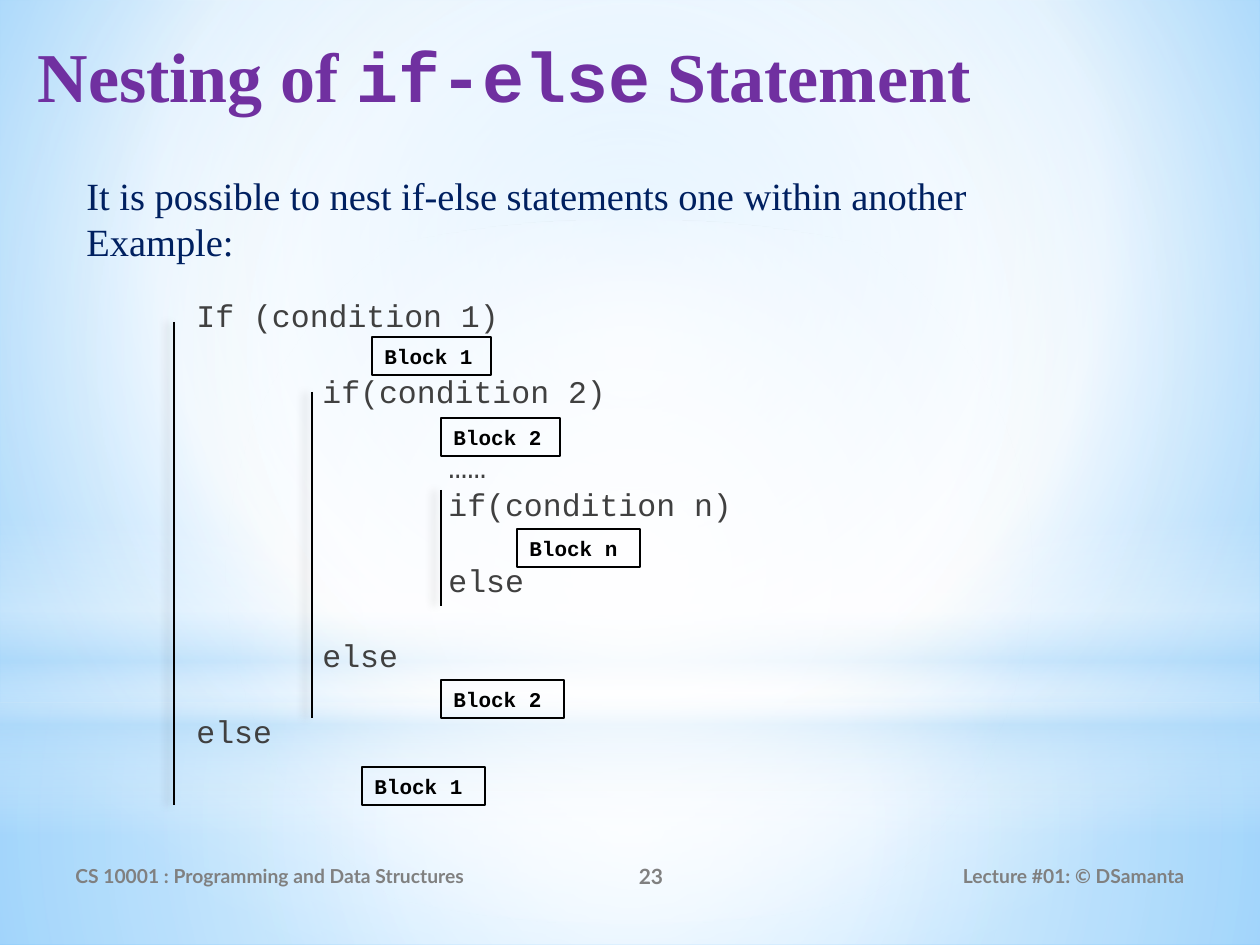
from lxml import etree
from pptx import Presentation
from pptx import util as u
from pptx.dml.color import RGBColor
from pptx.enum import shapes, text
from pptx.oxml import parse_xml
from pptx.oxml.ns import nsdecls, qn

HUE = {"title": "7030A0", "body": "002060", "code": "404040",
       "foot": "808080", "line": "000000"}
SERIF, MONO, SANS = "Times New Roman", "Courier New", "Lato"
LEFT, MID, RIGHT = text.PP_ALIGN.LEFT, text.PP_ALIGN.CENTER, text.PP_ALIGN.RIGHT


def px(*nums):
    return [u.Emu(round(n * 914400 / 126)) for n in nums]


def write(para, words, font, size, hue, bold=False):
    run = para.add_run()
    run.text = words
    run.font.name = font
    run.font.size = u.Pt(size)
    run.font.bold = bold
    run.font.color.rgb = RGBColor.from_string(HUE[hue])


deck = Presentation()
deck.slide_width, deck.slide_height = px(1260, 945)
slide = deck.slides.add_slide(deck.slide_layouts[5])

RECT, OVAL = shapes.MSO_SHAPE.RECTANGLE, shapes.MSO_SHAPE.OVAL
CORE = (50, 50, 50, 50)
layers = [
    (None, None, (20, 10, 20, 60),
     [(0, "9ED5FF", 100), (60, "FFFFFF", 100), (100, "5BB9FF", 100)]),
    (RECT, (0, 703, 1260, 242), CORE,
     [(0, "FFFFFF", 91), (37, "FFFFFF", 76), (100, "B4DCFA", 79)]),
    (RECT, (0, 0, 1260, 703), CORE,
     [(0, "FFFFFF", 89), (48, "FFFFFF", 62), (100, "B4DCFA", 79)]),
    (RECT, (0, 519, 1260, 315), None,
     [(0, "FFFFFF", 0), (29, "FFFFFF", 30), (45, "B4DCFA", 40),
      (55, "FFFFFF", 26), (65, "B4DCFA", 60), (100, "FFFFFF", 0)]),
    (OVAL, (0, 220, 1260, 703), CORE,
     [(0, "FFFFFF", 100), (56, "FFFFFF", 0)]),
]
for kind, box, focus, stops in layers:
    if kind is None:
        slide.background.fill.solid()
        root = slide.element
    else:
        layer = slide.shapes.add_shape(kind, *px(*box))
        layer.shadow.inherit = False
        layer.fill.solid()
        layer.line.fill.background()
        root = layer.element
    old = root.find(".//" + qn("a:solidFill"))
    grad = parse_xml(f'<a:gradFill {nsdecls("a")} rotWithShape="1"/>')
    row = etree.SubElement(grad, qn("a:gsLst"))
    for spot, hue, alpha in stops:
        stop = etree.SubElement(row, qn("a:gs"), pos=str(spot * 1000))
        tint = etree.SubElement(stop, qn("a:srgbClr"), val=hue)
        etree.SubElement(tint, qn("a:alpha"), val=str(alpha * 1000))
    if focus:
        ring = etree.SubElement(grad, qn("a:path"), path="circle")
        rect = etree.SubElement(ring, qn("a:fillToRect"))
        for side, part in zip("ltrb", focus):
            rect.set(side, str(part * 1000))
    else:
        etree.SubElement(grad, qn("a:lin"), ang="5400000", scaled="0")
    old.getparent().replace(old, grad)

title = slide.shapes.title
title.element.getparent().append(title.element)
title.left, title.top, title.width, title.height = px(25, 26, 1201, 139)
frame = title.text_frame
frame.word_wrap = True
frame.vertical_anchor = text.MSO_ANCHOR.TOP
frame.margin_top = px(7)[0]
para = frame.paragraphs[0]
para.alignment = LEFT
for words, font in [("Nesting of ", SERIF), ("if-else", MONO), (" Statement", SERIF)]:
    write(para, words, font, 40, "title", True)

for words, size, side, left, wide in [
        ("CS 10001 : Programming and Data Structures", 11, LEFT, 63, 462),
        ("23", 12, MID, 525, 252),
        ("Lecture #01: © DSamanta", 11, RIGHT, 850, 347)]:
    frame = slide.shapes.add_textbox(*px(left, 851, wide, 50)).text_frame
    frame.word_wrap = True
    frame.vertical_anchor = text.MSO_ANCHOR.MIDDLE
    frame.paragraphs[0].alignment = side
    write(frame.paragraphs[0], words, SANS, size, "foot", True)

intro = [(0, 0, "It is possible to nest if-else statements one within another"),
         (0, 0, "Example:")]
code = [(0, 0, "If (condition 1)"), (1, 1, "if(condition 2)"),
        (2, 1, "……"), (2, 0, "if(condition n)"), (2, 1, "else"),
        (1, 1, "else"), (0, 1, "else")]
for box, rows, font, size, hue, pitch in [
        ((74, 166, 1052, 106), intro, SERIF, 22, "body", 26.3),
        ((184, 290, 873, 509), code, MONO, 18, "code", 21.6)]:
    frame = slide.shapes.add_textbox(*px(*box)).text_frame
    frame.word_wrap = True
    for n, (depth, gap, words) in enumerate(rows):
        para = frame.add_paragraph() if n else frame.paragraphs[0]
        para.line_spacing = u.Pt(pitch)
        para.space_before = u.Pt(pitch * gap)
        para._p.get_or_add_pPr().set("marL", str(px(126 * depth)[0]))
        write(para, words, font, size, hue)

for words, left, top, wide in [
        ("Block 1", 372, 337, 119), ("Block 2", 441, 418, 119),
        ("Block n", 517, 529, 123), ("Block 2", 441, 680, 123),
        ("Block 1", 362, 767, 123)]:
    block = slide.shapes.add_shape(RECT, *px(left, top, wide, 38))
    block.shadow.inherit = False
    block.fill.background()
    block.line.color.rgb = RGBColor.from_string(HUE["line"])
    block.line.width = u.Pt(1.25)
    frame = block.text_frame
    frame.word_wrap = True
    frame.vertical_anchor = text.MSO_ANCHOR.MIDDLE
    frame.paragraphs[0].alignment = LEFT
    write(frame.paragraphs[0], words, MONO, 12, "line", True)

for left, top, base in [(312, 392, 718), (174, 322, 805), (441, 490, 606)]:
    bar = slide.shapes.add_connector(
        shapes.MSO_CONNECTOR.STRAIGHT, *px(left, top, left, base))
    bar.line.color.rgb = RGBColor.from_string(HUE["line"])
    bar.line.width = u.Pt(1.25)
    glow = etree.SubElement(bar.element.spPr, qn("a:effectLst"))
    shade = etree.SubElement(glow, qn("a:outerShdw"), blurRad="63500",
                             dist="50800", dir="10800000", rotWithShape="0")
    tint = etree.SubElement(shade, qn("a:srgbClr"), val=HUE["line"])
    etree.SubElement(tint, qn("a:alpha"), val="20000")

deck.save("out.pptx")
